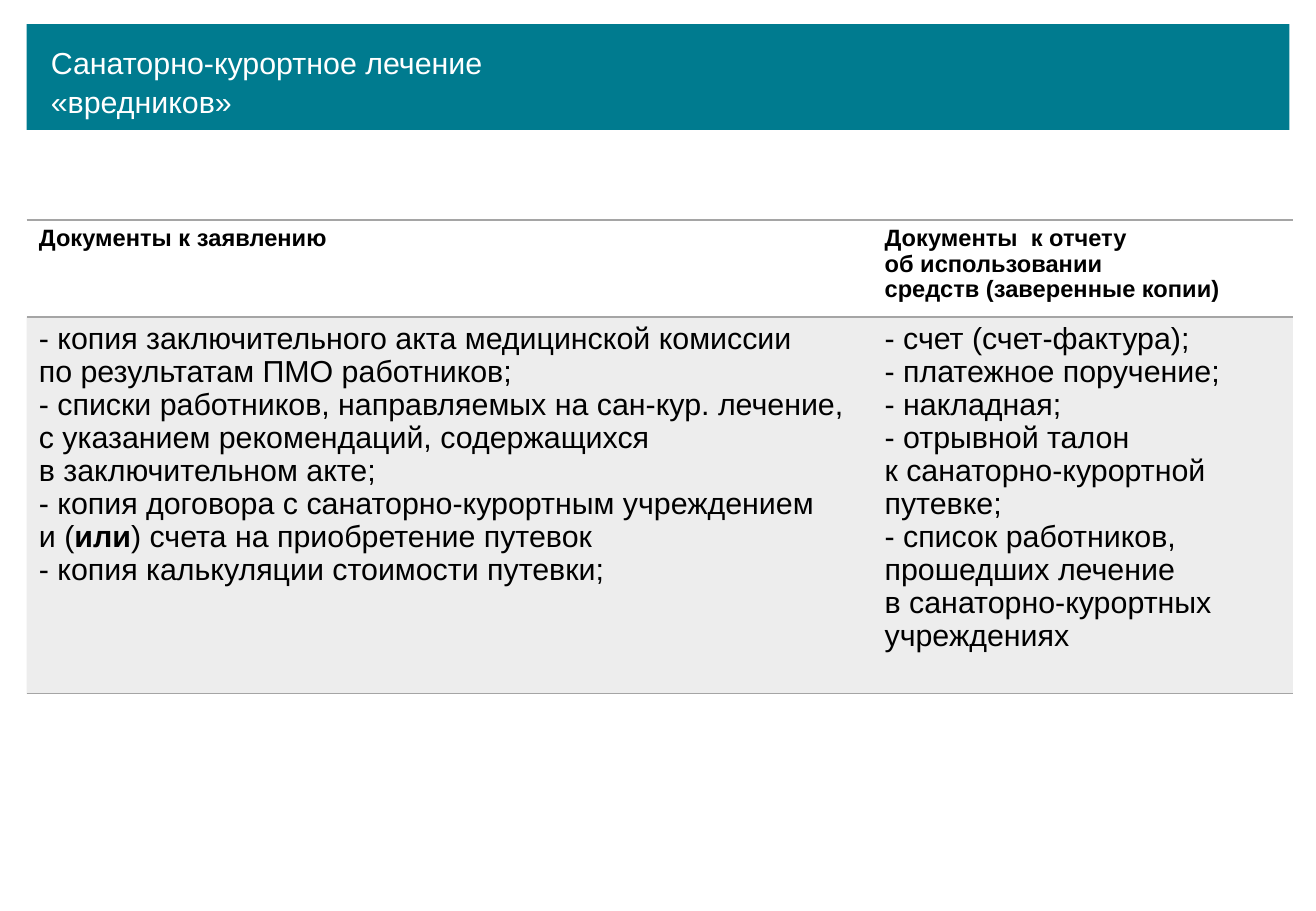
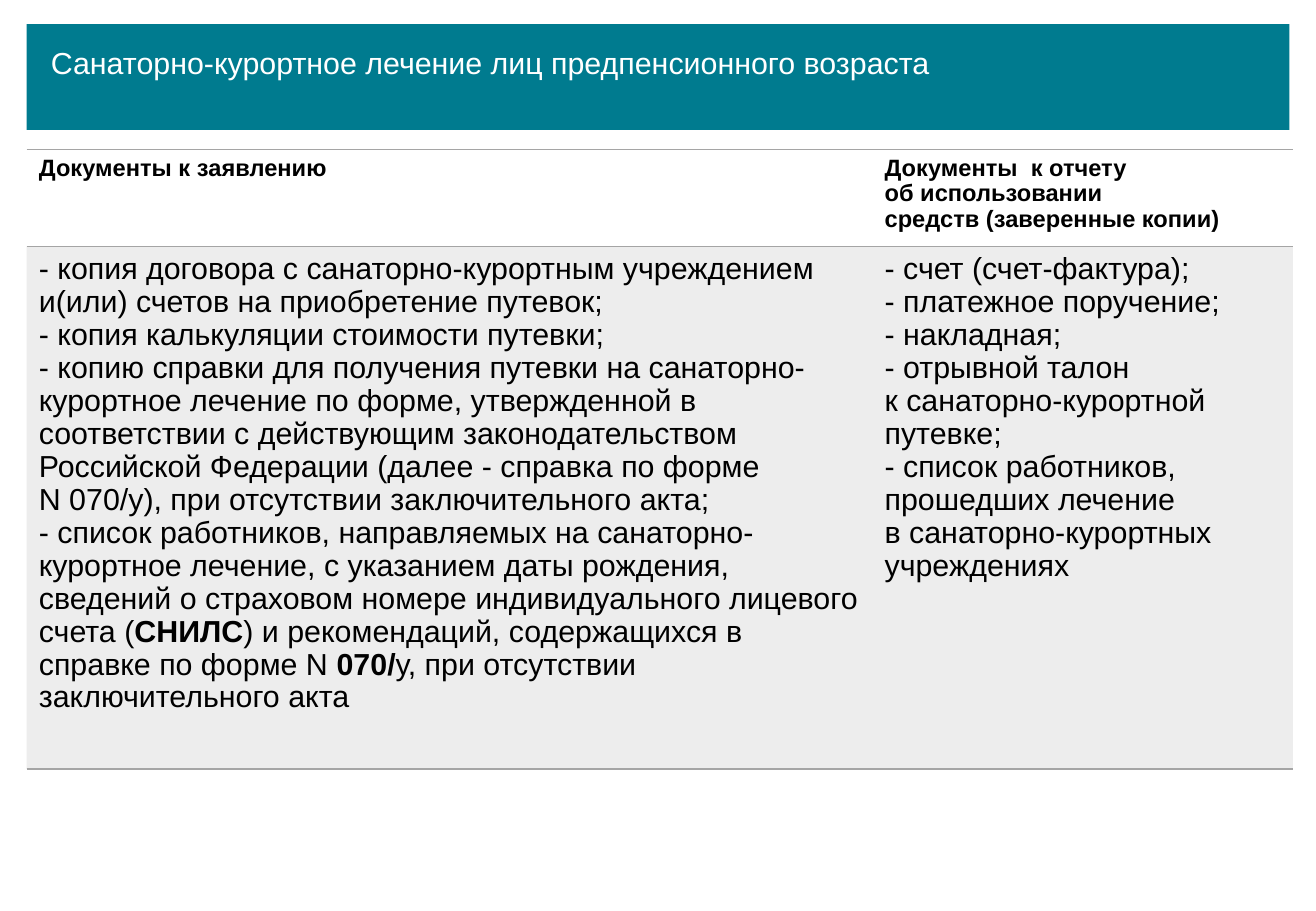
from lxml.etree import SubElement
from pptx import Presentation
from pptx.dml.color import RGBColor
from pptx.enum.shapes import MSO_SHAPE as Shape
from pptx.enum.text import MSO_ANCHOR as Anchor, PP_ALIGN as Align
from pptx.oxml import parse_xml
from pptx.oxml.ns import nsdecls, qn
from pptx.util import Inches, Pt

COLORS = {"band": "007B8F", "title": "FFFFFF", "text": "000000", "grey": "A5A5A5"}
FONT = "Arial"
GRID_STEP = 0.1  # inches in one grid column or row
SLIDE_COLUMNS, SLIDE_ROWS = 108.3, 75
LEFT = 2.2
TABLE_COLUMNS = (69.6, 34.6)
HEADER_ROWS = 8
PLAIN_TABLE_STYLE = "{2D5ABB26-0587-4C30-8999-92F81FD0307C}"

HEADERS = (
    ["Документы к заявлению"],
    ["Документы  к отчету\nоб использовании", "средств (заверенные копии)"],
)
REPORT_DOCUMENTS = [
    "- счет (счет-фактура);",
    "- платежное поручение;",
    "- накладная;",
    "- отрывной талон\nк санаторно-курортной путевке;",
    "- список работников,",
    "прошедших лечение\nв санаторно-курортных учреждениях",
]
HAZARD_DOCUMENTS = [
    "- копия заключительного акта медицинской комиссии\nпо результатам ПМО работников;",
    "- списки работников, направляемых на сан-кур. лечение, с указанием рекомендаций, "
    "содержащихся\nв заключительном акте;",
    "- копия договора с санаторно-курортным учреждением\n"
    "и (**или**) счета на приобретение путевок",
    "- копия калькуляции стоимости путевки;",
]
PENSION_DOCUMENTS = [
    "- копия договора с санаторно-курортным учреждением и(или) счетов на приобретение путевок;",
    "- копия калькуляции стоимости путевки;",
    "- копию справки для получения путевки на санаторно-курортное лечение по форме, "
    "утвержденной в соответствии с действующим законодательством Российской Федерации "
    "(далее - справка по форме\nN 070/у), при отсутствии заключительного акта;",
    "- список работников, направляемых на санаторно-курортное лечение, с указанием даты "
    "рождения, сведений о страховом номере индивидуального лицевого счета (**СНИЛС**) "
    "и рекомендаций, содержащихся в справке по форме N **070/**у, "
    "при отсутствии заключительного акта",
]


def grid(*lengths):
    return [Inches(length * GRID_STEP) for length in lengths]


class SlideBuilder:
    def __init__(self):
        self.deck = Presentation()
        self.deck.slide_width, self.deck.slide_height = grid(SLIDE_COLUMNS, SLIDE_ROWS)
        self.page = None

    def new_page(self):
        self.page = self.deck.slides.add_slide(self.deck.slide_layouts[6])

    def add_text(self, frame, paragraphs, size, color, spacing, bold=False):
        """Fill a text frame; ** switches bold and a newline breaks the line."""
        for index, text in enumerate(paragraphs):
            para = frame.paragraphs[0] if index == 0 else frame.add_paragraph()
            para.alignment = Align.LEFT
            para.line_spacing = spacing
            for part, span_text in enumerate(text.split("**")):
                for line, line_text in enumerate(span_text.split("\n")):
                    if line:
                        para.add_line_break()
                    if not line_text:
                        continue
                    span = para.add_run()
                    span.text = line_text
                    span.font.name = FONT
                    span.font.size = Pt(size)
                    span.font.bold = bold or part % 2 == 1
                    span.font.color.rgb = RGBColor.from_string(COLORS[color])

    def title_band(self):
        band = self.page.shapes.add_shape(Shape.RECTANGLE, *grid(LEFT, 2, 103.9, 8.7))
        band.shadow.inherit = False
        band.fill.solid()
        band.fill.fore_color.rgb = RGBColor.from_string(COLORS["band"])
        band.line.fill.background()

    def title(self, text, columns, rows):
        self.title_band()
        box = self.page.shapes.add_textbox(*grid(3.2, 2.9, columns, rows))
        box.text_frame.word_wrap = True
        self.add_text(box.text_frame, [text], 18, "title", 1.07)

    def border(self, cell, sides):
        for index, side in enumerate(sides):
            line = parse_xml(
                f'<a:{side} {nsdecls("a")} w="12700"><a:solidFill>'
                f'<a:srgbClr val="{COLORS["grey"]}"/></a:solidFill></a:{side}>'
            )
            cell._tc.get_or_add_tcPr().insert(index, line)

    def tint(self, cell):
        """Fill a cell with grey at 20% opacity."""
        cell.fill.solid()
        cell.fill.fore_color.rgb = RGBColor.from_string(COLORS["grey"])
        color = cell._tc.tcPr.find(f'{qn("a:solidFill")}/{qn("a:srgbClr")}')
        SubElement(color, qn("a:alpha"), val="20000")

    def documents_table(self, top, body_rows, bodies):
        heights = (HEADER_ROWS, body_rows)
        area = grid(LEFT, top, sum(TABLE_COLUMNS), sum(heights))
        table = self.page.shapes.add_table(2, 2, *area).table
        table.horz_banding = False
        table._tbl.tblPr.find(qn("a:tableStyleId")).text = PLAIN_TABLE_STYLE
        for row, height in zip(table.rows, grid(*heights)):
            row.height = height
        for index, width in enumerate(grid(*TABLE_COLUMNS)):
            table.columns[index].width = width
            header, body = table.cell(0, index), table.cell(1, index)
            header.vertical_anchor = body.vertical_anchor = Anchor.TOP
            header.fill.background()
            self.tint(body)
            self.border(header, ("lnT", "lnB"))
            self.border(body, ("lnT", "lnB"))
            self.add_text(header.text_frame, HEADERS[index], 14, "text", 0.97, bold=True)
            self.add_text(body.text_frame, bodies[index], 18, "text", 0.97)


def main():
    builder = SlideBuilder()

    builder.new_page()
    builder.title("Санаторно-курортное лечение «вредников»", 47.3, 7.1)
    builder.documents_table(18.1, 31, (HAZARD_DOCUMENTS, REPORT_DOCUMENTS))

    builder.new_page()
    builder.title("Санаторно-курортное лечение лиц предпенсионного возраста", 78.8, 4)
    builder.documents_table(12.3, 43, (PENSION_DOCUMENTS, REPORT_DOCUMENTS))

    builder.deck.save("out.pptx")


if __name__ == "__main__":
    main()
